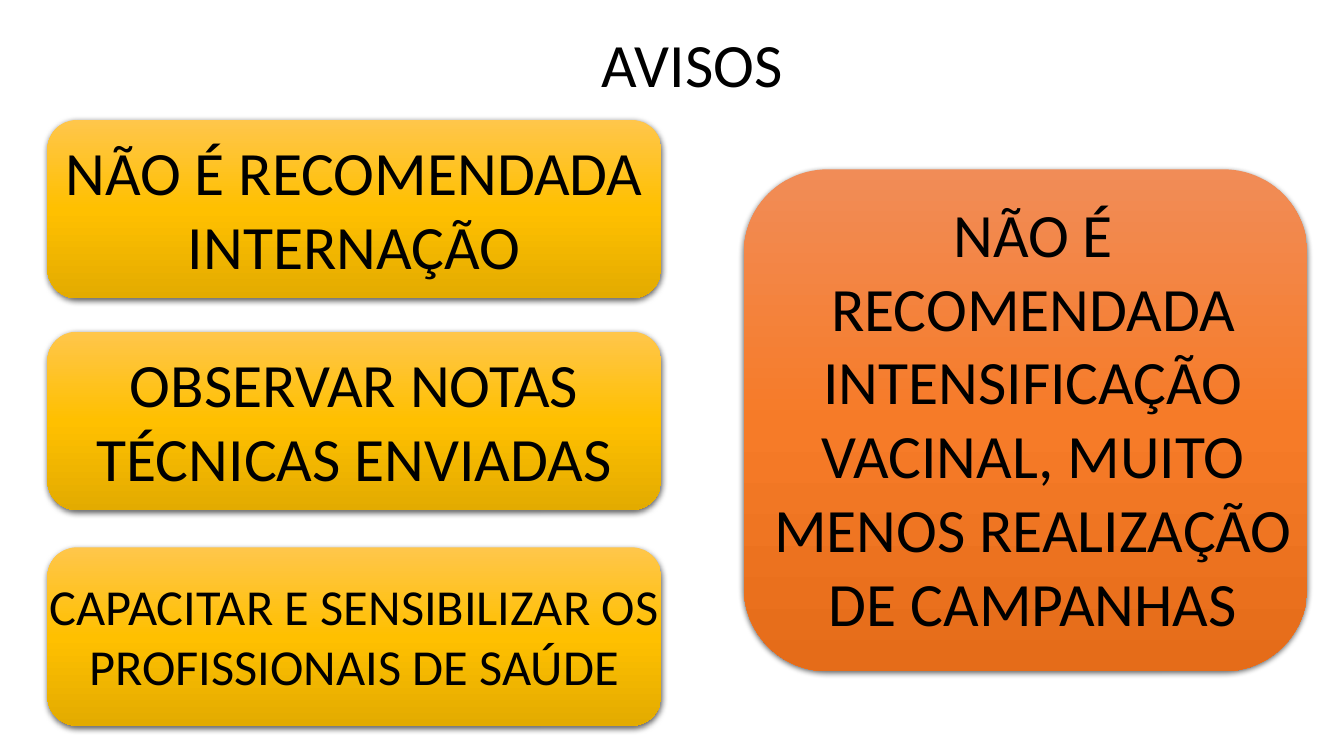
from copy import deepcopy

from lxml import etree
from pptx import Presentation
from pptx.dml.color import RGBColor
from pptx.enum.shapes import MSO_SHAPE
from pptx.enum.text import MSO_ANCHOR, PP_ALIGN
from pptx.oxml.ns import qn
from pptx.util import Pt

ROUND = MSO_SHAPE.ROUNDED_RECTANGLE
MIDDLE = MSO_ANCHOR.MIDDLE
CENTER = PP_ALIGN.CENTER

BLACK = RGBColor(0x00, 0x00, 0x00)
GOLD = (RGBColor(0xFF, 0xC6, 0x4B), RGBColor(0xFF, 0xC0, 0x00), RGBColor(0xE3, 0xAB, 0x00))
ORANGE = (RGBColor(0xF1, 0x8C, 0x57), RGBColor(0xF6, 0x7B, 0x28), RGBColor(0xE5, 0x6C, 0x19))

LEFT, WIDTH, HEIGHT = 33.84, 438.48, 127.44
NOTES = (
    (85.68, "NÃO É RECOMENDADA INTERNAÇÃO", 44, 113.76),
    (236.88, "OBSERVAR NOTAS TÉCNICAS ENVIADAS", 44, 113.76),
    (390.96, "CAPACITAR E SENSIBILIZAR OS PROFISSIONAIS DE SAÚDE", 36, 94.32),
)
WARNING = "NÃO É RECOMENDADA INTENSIFICAÇÃO VACINAL, MUITO MENOS REALIZAÇÃO DE CAMPANHAS"


def shade(shape, colors):
    """Fill a shape from top to bottom with three colours."""
    fill = shape.fill
    fill.gradient()
    fill.gradient_angle = 270
    first = next(shape._element.spPr.iter(qn("a:gs")))
    first.addnext(deepcopy(first))
    for stop, color, place in zip(fill.gradient_stops, colors, (0, 0.5, 1)):
        stop.color.rgb = color
        stop.position = place


def cast(shape):
    """Give a shape a soft shadow below it."""
    shape.shadow.inherit = False
    effects = shape._element.spPr.find(qn("a:effectLst"))
    outer = etree.SubElement(
        effects, qn("a:outerShdw"), blurRad=str(Pt(4.5)), dist=str(Pt(1.5)),
        dir="5400000", algn="ctr", rotWithShape="0")
    color = etree.SubElement(outer, qn("a:srgbClr"), val=str(BLACK))
    etree.SubElement(color, qn("a:alpha"), val="63000")


def add_card(slide, left, top, width, height, colors):
    """Add a rounded card with a gradient and a shadow."""
    card = slide.shapes.add_shape(ROUND, Pt(left), Pt(top), Pt(width), Pt(height))
    shade(card, colors)
    card.line.fill.background()
    cast(card)


def add_text(slide, left, top, width, height, text, size=44, spacing=1.0):
    """Add a centred, wrapped line of text."""
    box = slide.shapes.add_textbox(Pt(left), Pt(top), Pt(width), Pt(height))
    frame = box.text_frame
    frame.word_wrap = True
    frame.vertical_anchor = MIDDLE
    line = frame.paragraphs[0]
    line.text = text
    line.alignment = CENTER
    line.line_spacing = spacing
    line.font.name = "Calibri"
    line.font.size = Pt(size)
    line.font.color.rgb = BLACK


def main():
    """Build the slide of notices."""
    deck = Presentation()
    deck.slide_width, deck.slide_height = Pt(960), Pt(540)
    slide = deck.slides.add_slide(deck.slide_layouts[6])
    add_text(slide, 80.64, -4.32, 828, 104.4, "AVISOS", spacing=0.9)
    for top, text, size, tall in NOTES:
        add_card(slide, LEFT, top, WIDTH, HEIGHT, GOLD)
        add_text(slide, LEFT - 15, top + (HEIGHT - tall) / 2 - 0.7, WIDTH + 30, tall, text, size)
    add_card(slide, 531.36, 120.96, 402.48, 358.56, ORANGE)
    add_text(slide, 527.76, 134.64, 420.48, 326.88, WARNING)
    deck.save("out.pptx")


if __name__ == "__main__":
    main()
